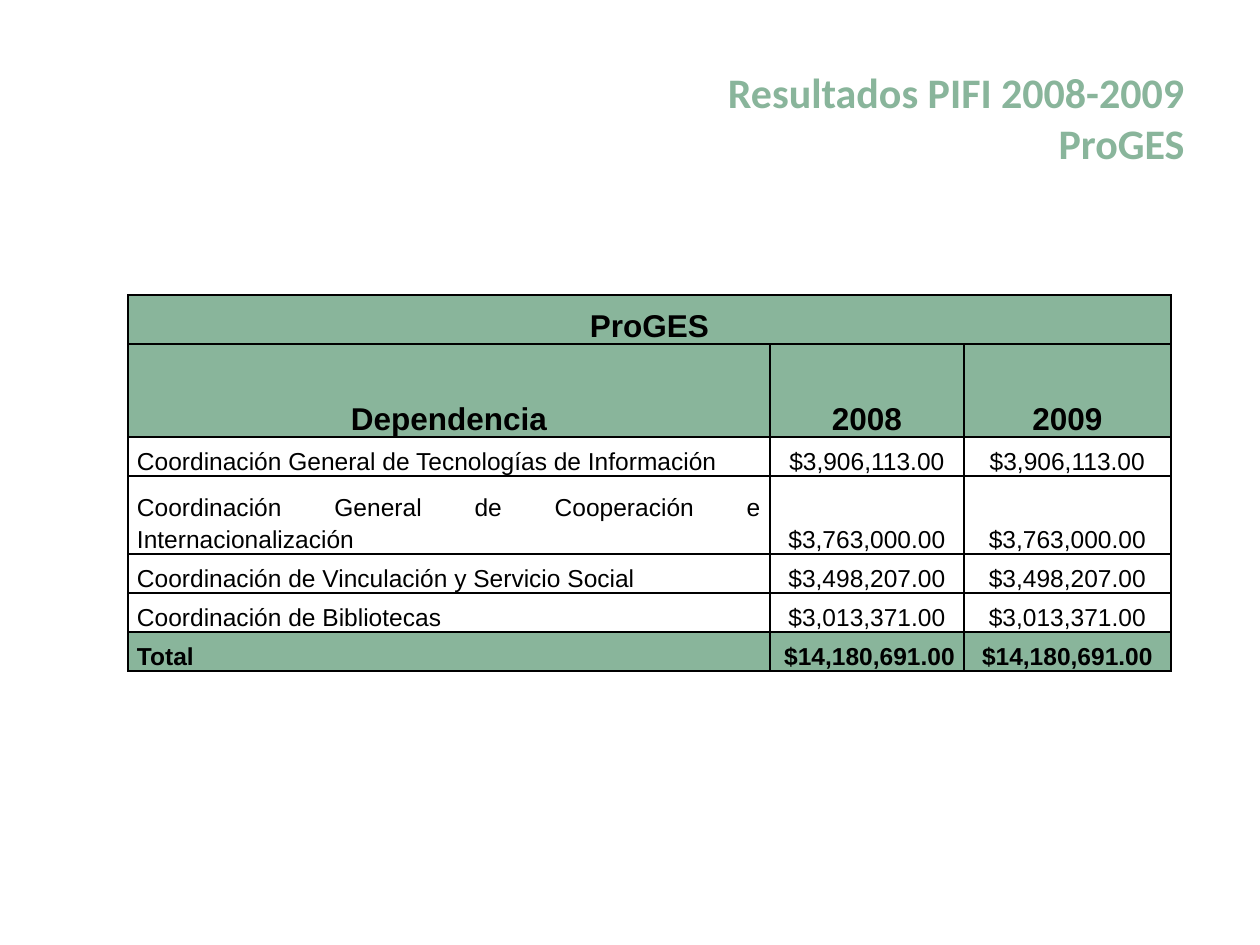
from lxml.etree import SubElement
from pptx import Presentation
from pptx.dml.color import RGBColor
from pptx.enum.text import MSO_ANCHOR as Anchor, PP_ALIGN as Align
from pptx.oxml.ns import qn
from pptx.util import Emu, Inches, Pt

SCALE = 914400 / 126
GREEN = RGBColor(0x89, 0xB5, 0x9B)
BLACK = RGBColor(0, 0, 0)
WHITE = RGBColor(255, 255, 255)

COLUMN_WIDTHS = (642, 194, 207)
ROW_HEIGHTS = (49, 93, 39, 78, 39, 39, 39)
BUDGETS = [
    ("ProGES", "", ""),
    ("Dependencia", "2008", "2009"),
    ("Coordinación General de Tecnologías de Información",
     "$3,906,113.00", "$3,906,113.00"),
    ("Coordinación General de Cooperación e Internacionalización",
     "$3,763,000.00", "$3,763,000.00"),
    ("Coordinación de Vinculación y Servicio Social",
     "$3,498,207.00", "$3,498,207.00"),
    ("Coordinación de Bibliotecas", "$3,013,371.00", "$3,013,371.00"),
    ("Total", "$14,180,691.00", "$14,180,691.00"),
]
HEADER_ROWS = 2
TOTAL_ROW = len(BUDGETS) - 1


def px(length):
    return Emu(round(length * SCALE))


def write(frame, text, *, size, font="Arial", color=BLACK, bold=False,
          align=Align.CENTER, line_spacing=None, space_after=None):
    """Fill the first paragraph; a vertical tab in the text breaks the line."""
    paragraph = frame.paragraphs[0]
    paragraph.text = text
    paragraph.alignment = align
    paragraph.line_spacing = line_spacing
    paragraph.space_after = space_after
    for run in paragraph.runs:
        run.font.name = font
        run.font.size = Pt(size)
        run.font.bold = bold
        run.font.color.rgb = color


def add_title(slide, left, top, width, height):
    title = slide.shapes.add_textbox(px(left), px(top), px(width), px(height))
    frame = title.text_frame
    frame.word_wrap = True
    frame.vertical_anchor = Anchor.MIDDLE
    write(frame, "Resultados PIFI 2008-2009\vProGES", size=24, font="Calibri",
          color=GREEN, bold=True, align=Align.RIGHT)


def add_borders(cell):
    properties = cell._tc.get_or_add_tcPr()
    for side in ("a:lnL", "a:lnR", "a:lnT", "a:lnB"):
        line = SubElement(properties, qn(side), w=str(Pt(1)))
        fill = SubElement(line, qn("a:solidFill"))
        SubElement(fill, qn("a:srgbClr"), val=str(BLACK))


def cell_align(row, column):
    if row < HEADER_ROWS:
        return Align.CENTER
    if column == 0:
        return Align.JUSTIFY
    return Align.RIGHT if (row, column) == (TOTAL_ROW, 1) else Align.CENTER


def add_budget_table(slide, left, top):
    table = slide.shapes.add_table(
        len(ROW_HEIGHTS), len(COLUMN_WIDTHS), px(left), px(top),
        px(sum(COLUMN_WIDTHS)), px(sum(ROW_HEIGHTS))).table
    table.first_row = table.horz_banding = False
    for column, width in zip(table.columns, COLUMN_WIDTHS):
        column.width = px(width)
    for row, height in zip(table.rows, ROW_HEIGHTS):
        row.height = px(height)
    table.cell(0, 0).merge(table.cell(0, len(COLUMN_WIDTHS) - 1))

    for r, texts in enumerate(BUDGETS):
        is_header = r < HEADER_ROWS
        highlighted = is_header or r == TOTAL_ROW
        for c, text in enumerate(texts):
            cell = table.cell(r, c)
            add_borders(cell)
            cell.fill.solid()
            cell.fill.fore_color.rgb = GREEN if highlighted else WHITE
            cell.vertical_anchor = Anchor.BOTTOM
            cell.margin_left = cell.margin_right = px(9)
            cell.margin_top = cell.margin_bottom = 0
            if text:
                write(cell.text_frame, text, size=18 if is_header else 14,
                      bold=highlighted, align=cell_align(r, c),
                      line_spacing=1.15, space_after=Pt(10))


def main():
    deck = Presentation()
    deck.slide_width, deck.slide_height = Inches(10), Inches(7.5)
    slide = deck.slides.add_slide(deck.slide_layouts[6])
    add_title(slide, 63, 38, 1134, 158)
    add_budget_table(slide, 128, 295)
    deck.save("out.pptx")


if __name__ == "__main__":
    main()
